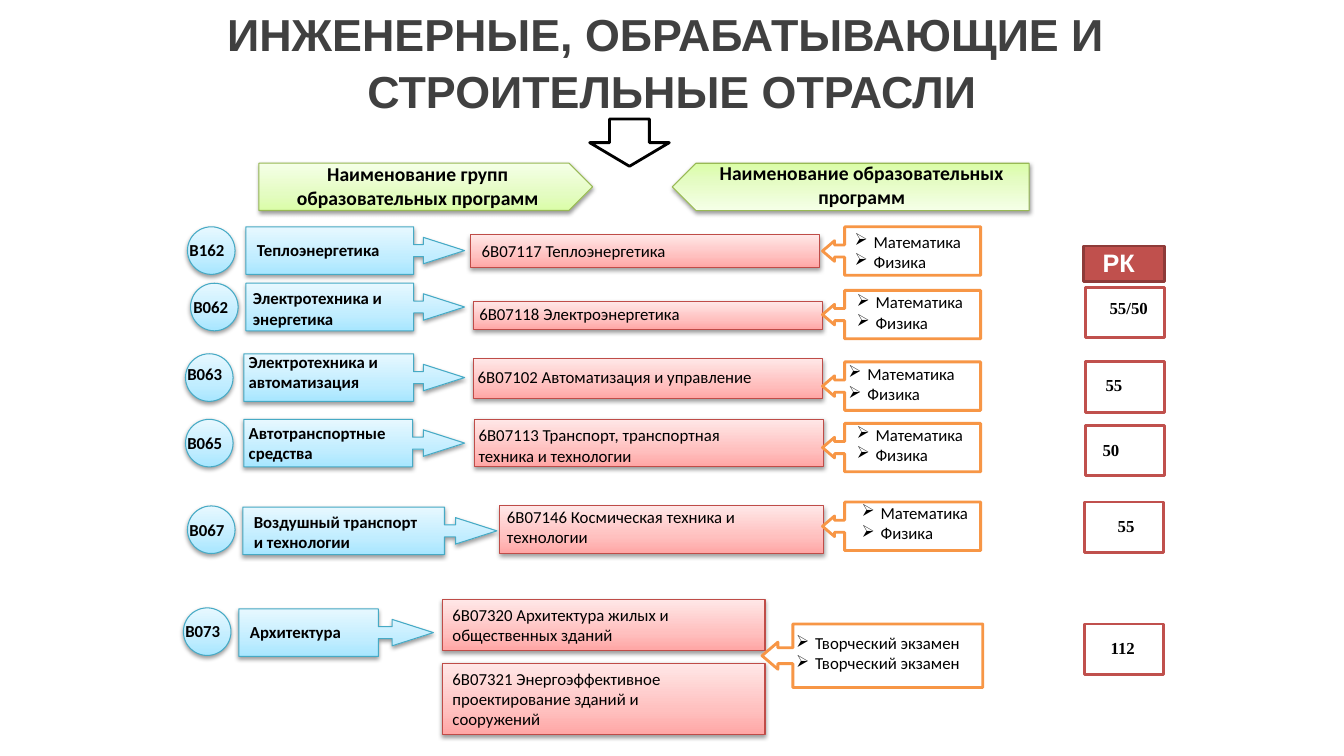
import dataclasses
import lxml.etree
import pptx
import pptx.dml.color
import pptx.enum.shapes
import pptx.enum.text
import pptx.oxml.ns
import pptx.util

Pt = pptx.util.Pt
qn = pptx.oxml.ns.qn
MSO = pptx.enum.shapes.MSO_SHAPE
ALIGN = pptx.enum.text.PP_ALIGN
ANCHOR = pptx.enum.text.MSO_ANCHOR

COLORS = {
    "white": "FFFFFF", "black": "000000", "title": "404040",
    "blue_line": "46AAC5", "red_line": "BF4C48", "green_line": "98B955",
    "orange": "F79646", "score": "C0504D", "score_dark": "8E3B39",
}
GRADIENTS = {
    "blue": ("A7E6FF", "C1EDFF", "E7F8FF"),
    "red": ("FFA6A5", "FFC0BF", "FFE7E7"),
    "green": ("DAFDA7", "E4FCC2", "F5FFE7"),
}
STOPS = (0, 35000, 100000)
FONTS = {
    "title": {"name": "Arial", "size": Pt(32), "bold": True},
    "header": {"name": "Calibri", "size": Pt(14), "bold": True},
    "label": {"name": "Calibri", "size": Pt(12), "bold": True},
    "body": {"name": "Calibri", "size": Pt(12), "bold": False},
    "score": {"name": "Times New Roman", "size": Pt(12), "bold": True},
    "score_header": {"name": "Arial", "size": Pt(18), "bold": True},
}
CIRCLE = 34


@dataclasses.dataclass
class Box:
    x: float
    y: float
    w: float
    h: float


@dataclasses.dataclass
class Label:
    x: float
    y: float
    text: str


@dataclasses.dataclass
class Row:
    circle: tuple[float, float]
    code: Label
    group: Box
    group_body: float
    group_label: Label
    programs: list[tuple[Box, Label]]
    exam: Box
    exam_label: Label
    score: tuple[float, float] | None = None
    score_label: Label | None = None


SCIENCE = "Математика\nФизика"
ROWS = [
    Row((133.9, 162), Label(128.2, 167.8, "B162"),
        Box(175.7, 162, 156.2, 34), 0.767, Label(176.4, 167.8, "Теплоэнергетика"),
        [(Box(336.2, 167.8, 249.1, 23), Label(337, 168.5, "6В07117 Теплоэнергетика"))],
        Box(587.5, 162, 113, 34.6), Label(603.4, 162, SCIENCE)),
    Row((136.1, 202.3), Label(131, 208.1, "B062"),
        Box(175.7, 202.3, 156.2, 34), 0.767, Label(173.5, 202.3, "Электротехника и\nэнергетика"),
        [(Box(338.4, 215.3, 249.1, 20.2), Label(335.3, 213.1, "6В07118 Электроэнергетика"))],
        Box(587.5, 207.4, 113, 34.6), Label(604.8, 205.2, SCIENCE),
        (775.4, 205.2), Label(785.5, 208.8, "55/50")),
    Row((132.5, 252.7), Label(126.7, 256.3, "B063"),
        Box(174.2, 252.7, 157.7, 34), 0.769, Label(170.6, 247.7, "Электротехника и\nавтоматизация"),
        [(Box(338.4, 256.3, 249.1, 28.1), Label(334.1, 258.5, "6В07102 Автоматизация и управление"))],
        Box(587.5, 258.5, 113, 34.6), Label(599, 256.3, SCIENCE),
        (775.4, 258.5), Label(782.6, 264.2, "55")),
    Row((132.5, 299.5), Label(126.7, 305.3, "B065"),
        Box(174.2, 299.5, 157.7, 34), 0.764, Label(170.6, 298.1, "Автотранспортные\nсредства"),
        [(Box(339.1, 299.5, 249.1, 33.8),
          Label(334.8, 300.2, "6В07113 Транспорт, транспортная\nтехника и технологии"))],
        Box(587.5, 302.4, 113, 34.6), Label(604.8, 299.5, SCIENCE),
        (775.4, 303.8), Label(780.5, 310.3, "50")),
    Row((133.9, 361.4), Label(128.2, 367.9, "B067"),
        Box(173.5, 362.2, 181.4, 34), 0.794, Label(174.2, 362.2, "Воздушный транспорт\nи технологии"),
        [(Box(357.1, 361.4, 231.1, 33.8),
          Label(355, 358.6, "6В07146 Космическая техника и\nтехнологии"))],
        Box(587.5, 358.6, 113, 34.6), Label(608.4, 355.7, SCIENCE),
        (774.7, 358.6), Label(791.3, 365, "55")),
    Row((131, 434.2), Label(125.3, 440, "B073"),
        Box(170.6, 434.9, 139, 34), 0.717, Label(171.4, 440.6, "Архитектура"),
        [(Box(316.1, 428.4, 230.4, 36),
          Label(316.1, 428.4, "6В07320 Архитектура жилых и\nобщественных зданий")),
         (Box(316.1, 473.8, 230.4, 51.1),
          Label(316.1, 473.8, "6В07321 Энергоэффективное\nпроектирование зданий и\nсооружений"))],
        Box(544.3, 445.7, 157.7, 45.4), Label(561.6, 448.6, "Творческий экзамен\nТворческий экзамен"),
        (774.7, 445.7), Label(786.2, 452.2, "112")),
]


def rgb(name: str) -> pptx.dml.color.RGBColor:
    return pptx.dml.color.RGBColor.from_string(COLORS[name])


def add_preset(s, kind, box: Box, line: str, width: float, adjustments=()):
    sp = s.shapes.add_shape(kind, Pt(box.x), Pt(box.y), Pt(box.w), Pt(box.h))
    sp.shadow.inherit = False
    sp.line.color.rgb = rgb(line)
    sp.line.width = Pt(width)
    for i, value in enumerate(adjustments):
        sp.adjustments[i] = value
    return sp


def add_flat(s, kind, box: Box, fill: str, line: str, adjustments=()):
    sp = add_preset(s, kind, box, line, 2, adjustments)
    sp.fill.solid()
    sp.fill.fore_color.rgb = rgb(fill)
    return sp


def add_glossy(s, kind, box: Box, tone: str, adjustments=()):
    sp = add_preset(s, kind, box, tone + "_line", 0.75, adjustments)
    sp.fill.gradient()
    sp.fill.gradient_angle = 90
    sub = lxml.etree.SubElement
    stops = sp._element.spPr.find(qn("a:gradFill")).find(qn("a:gsLst"))
    for old in list(stops):
        stops.remove(old)
    for pos, color in zip(STOPS, GRADIENTS[tone]):
        stop = sub(stops, qn("a:gs"), pos=str(pos))
        sub(stop, qn("a:srgbClr"), val=color)
    shadow = sub(sp._element.spPr.find(qn("a:effectLst")), qn("a:outerShdw"),
                 blurRad="40000", dist="20000", dir="5400000", rotWithShape="0")
    color = sub(shadow, qn("a:srgbClr"), val=COLORS["black"])
    sub(color, qn("a:alpha"), val="38000")
    return sp


def add_text(s, label: Label, w: float, font: str, color: str = "black",
             align=ALIGN.LEFT, bullets: bool = False):
    lines = label.text.split("\n")
    h = 7.2 + len(lines) * FONTS[font]["size"].pt * 1.2
    tf = s.shapes.add_textbox(Pt(label.x), Pt(label.y), Pt(w), Pt(h)).text_frame
    tf.word_wrap = True
    for i, line in enumerate(lines):
        p = tf.add_paragraph() if i else tf.paragraphs[0]
        p.alignment = align
        r = p.add_run()
        r.text = line
        for key, value in FONTS[font].items():
            setattr(r.font, key, value)
        r.font.color.rgb = rgb(color)
        if bullets:
            pPr = p._p.get_or_add_pPr()
            pPr.set("marL", str(Pt(13.5)))
            pPr.set("indent", str(-Pt(13.5)))
            lxml.etree.SubElement(pPr, qn("a:buChar"), char="➢")
    return tf


def add_row(s, row: Row) -> None:
    add_glossy(s, MSO.OVAL, Box(*row.circle, CIRCLE, CIRCLE), "blue")
    add_text(s, row.code, 51, "label")
    add_glossy(s, MSO.RIGHT_ARROW_CALLOUT, row.group, "blue", (0.25, 0.278, 0.868, row.group_body))
    add_text(s, row.group_label, 170, "label")
    for box, label in row.programs:
        add_glossy(s, MSO.RECTANGLE, box, "red")
        add_text(s, label, 250, "body")
    add_flat(s, MSO.LEFT_ARROW_CALLOUT, row.exam, "white", "orange", (0.25, 0.213, 0.25, 0.86))
    add_text(s, row.exam_label, 145, "body", bullets=True)
    if row.score and row.score_label:
        add_flat(s, MSO.RECTANGLE, Box(*row.score, 56.2, 36), "white", "score")
        add_text(s, row.score_label, 57, "score")


def main() -> None:
    prs = pptx.Presentation()
    prs.slide_width, prs.slide_height = Pt(960), Pt(540)
    s = prs.slides.add_slide(prs.slide_layouts[6])

    title = Label(0, 1.4, "ИНЖЕНЕРНЫЕ, ОБРАБАТЫВАЮЩИЕ И \nСТРОИТЕЛЬНЫЕ ОТРАСЛИ")
    tf = add_text(s, title, 960, "title", "title", ALIGN.CENTER)
    tf.vertical_anchor = ANCHOR.MIDDLE
    for p in tf.paragraphs:
        p.line_spacing = 1.05

    add_flat(s, MSO.DOWN_ARROW, Box(421.2, 85, 56.9, 33.8), "white", "black")
    add_glossy(s, MSO.PENTAGON, Box(185, 116.6, 238.3, 33.8), "green")
    add_glossy(s, MSO.PENTAGON, Box(480.2, 116.6, 254.9, 33.8), "green").rotation = 180
    add_text(s, Label(190.8, 112.3, "Наименование групп\nобразовательных программ"),
             215.3, "header", align=ALIGN.CENTER)
    add_text(s, Label(491, 111.6, "Наименование образовательных\nпрограмм"),
             249.1, "header", align=ALIGN.CENTER)

    for row in ROWS:
        add_row(s, row)

    add_flat(s, MSO.RECTANGLE, Box(774, 175.7, 57.6, 25.2), "score", "score_dark")
    add_text(s, Label(780.5, 172.8, "РК"), 55.4, "score_header", "white")
    prs.save("out.pptx")


if __name__ == "__main__":
    main()
